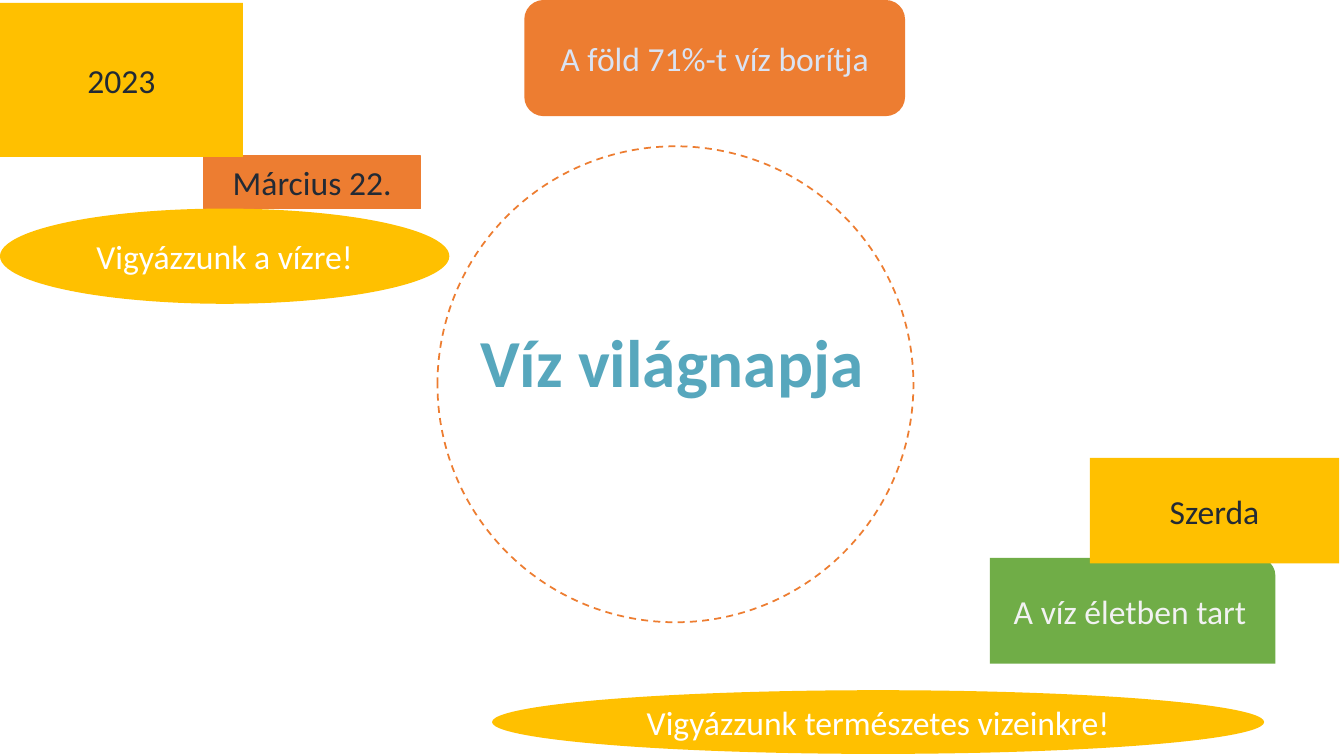
from pptx import Presentation, util as u
from pptx.dml.color import RGBColor
from pptx.enum import dml, shapes, text

COLORS = {
    "orange": "ED7D31", "gold": "FFC000", "green": "70AD47",
    "teal": "57A7BD", "dark": "222A35", "white": "FFFFFF",
    "pale_blue": "DAE3F3", "pale_grey": "F2F2F2",
}
SHAPE = shapes.MSO_SHAPE


def rgb(name):
    return RGBColor.from_string(COLORS[name])


class WaterDaySlide:
    def __init__(self, prs):
        self.s = prs.slides.add_slide(prs.slide_layouts[6])
        self.font = {"name": "Calibri", "size": u.Pt(24), "bold": False}

    def put_text(self, sp, words, color, **changes):
        tf = sp.text_frame
        tf.word_wrap = True
        tf.vertical_anchor = text.MSO_ANCHOR.MIDDLE
        p = tf.paragraphs[0]
        p.alignment = text.PP_ALIGN.CENTER
        r = p.add_run()
        r.text = words
        for key, value in {**self.font, **changes}.items():
            setattr(r.font, key, value)
        r.font.color.rgb = rgb(color)

    def shape(self, kind, box):
        sp = self.s.shapes.add_shape(kind, *map(u.Pt, box))
        sp.shadow.inherit = False
        return sp

    def ring(self, box, color):
        sp = self.shape(SHAPE.OVAL, box)
        sp.fill.background()
        line = {"width": u.Pt(1.25), "dash_style": dml.MSO_LINE.DASH}
        sp.line.color.rgb = rgb(color)
        for key, value in line.items():
            setattr(sp.line, key, value)

    def title(self, box, words, color):
        sp = self.s.shapes.add_textbox(*map(u.Pt, box))
        self.put_text(sp, words, color, size=u.Pt(48), bold=True)

    def label(self, kind, box, fill, words, color, outline=None):
        sp = self.shape(kind, box)
        sp.fill.solid()
        sp.fill.fore_color.rgb = rgb(fill)
        if outline:
            sp.line.color.rgb = rgb(outline)
            sp.line.width = u.Pt(1)
        else:
            sp.line.fill.background()
        self.put_text(sp, words, color)


def main():
    prs = Presentation()
    prs.slide_width, prs.slide_height = u.Pt(960), u.Pt(540)
    slide = WaterDaySlide(prs)
    slide.ring((312.5, 104.5, 340, 340), "orange")
    slide.title((302.5, 202.5, 355, 110), "Víz világnapja", "teal")

    labels = [
        (SHAPE.RECTANGLE, (145.5, 111.5, 155, 37.5), "orange", "Március 22.", "dark", "orange"),
        (SHAPE.OVAL, (0, 149, 321, 68), "gold", "Vigyázzunk a vízre!", "white"),
        (SHAPE.ROUNDED_RECTANGLE, (374.5, 0, 272, 83), "orange", "A föld 71%-t víz borítja", "pale_blue"),
        (SHAPE.ROUND_1_RECTANGLE, (707, 398.5, 204, 75.5), "green", "A víz életben tart", "pale_grey"),
        (SHAPE.RECTANGLE, (0, 2, 173.5, 110), "gold", "2023", "dark"),
        (SHAPE.OVAL, (351.5, 493, 551.5, 45.5), "gold", "Vigyázzunk természetes vizeinkre!", "white"),
        (SHAPE.RECTANGLE, (778.5, 327, 178, 75.5), "gold", "Szerda", "dark"),
    ]
    for label in labels:
        slide.label(*label)
    prs.save("out.pptx")


if __name__ == "__main__":
    main()
